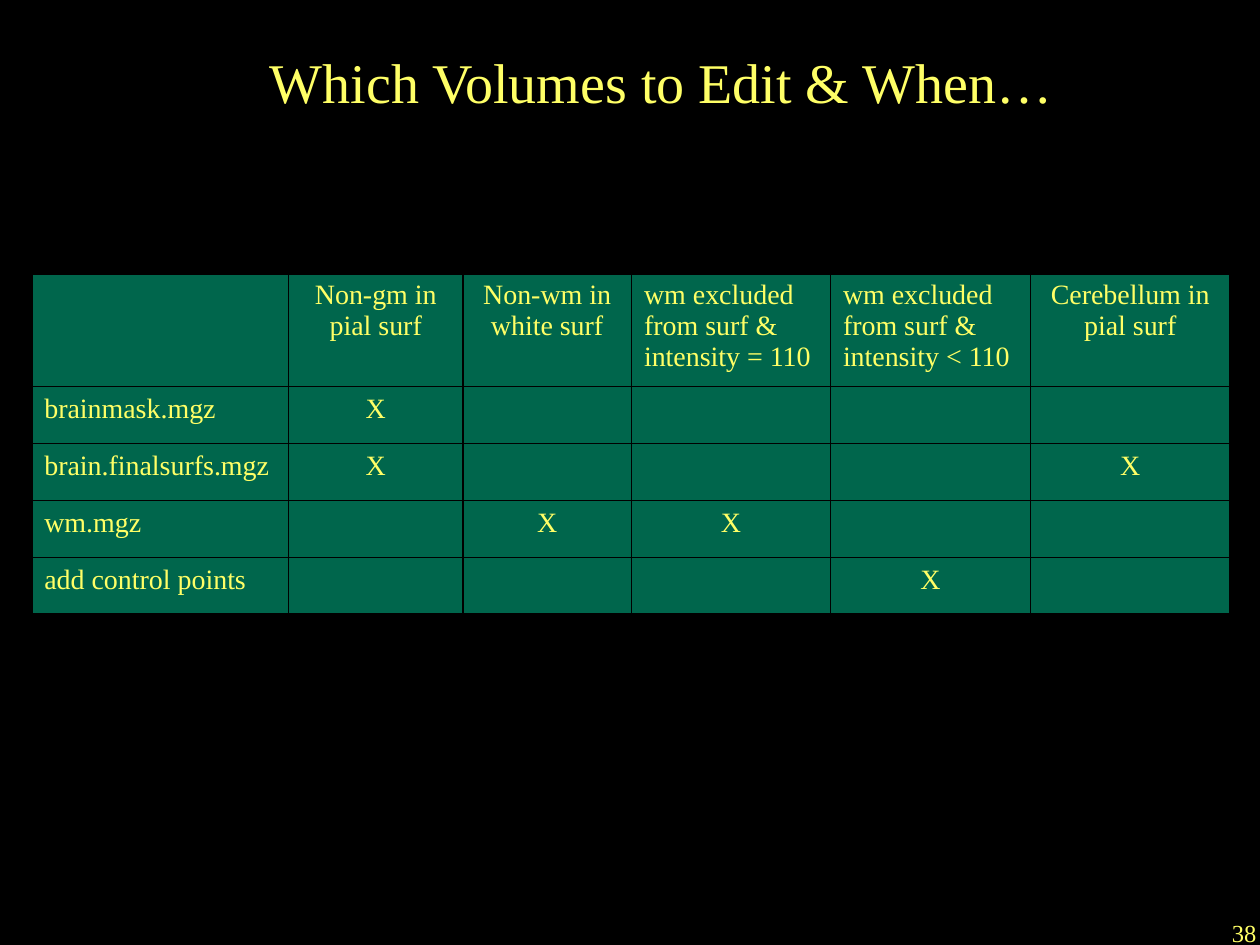
from dataclasses import dataclass

import pptx
import pptx.dml.color
import pptx.enum.text
import pptx.oxml
import pptx.oxml.ns
import pptx.util
from pptx.util import Cm

ALIGN = pptx.enum.text.PP_ALIGN
ANCHOR = pptx.enum.text.MSO_ANCHOR
FONT = "Times New Roman"
BLACK, YELLOW, GREEN = "000000", "FFFF66", "00CC99"
THIN, THICK = 1, 2.25


@dataclass(frozen=True)
class Problem:
    heading: str
    width: float
    align: ALIGN = ALIGN.CENTER


@dataclass(frozen=True)
class Volume:
    label: str
    marked: tuple[int, ...]


PROBLEMS = [
    Problem("", 5.18),
    Problem("Non-gm in pial surf", 3.51),
    Problem("Non-wm in white surf", 3.4),
    Problem("wm excluded from surf & intensity = 110", 4.01, ALIGN.LEFT),
    Problem("wm excluded from surf & intensity < 110", 4.03, ALIGN.LEFT),
    Problem("Cerebellum in pial surf", 4.03),
]
VOLUMES = [
    Volume("brainmask.mgz", (1,)),
    Volume("brain.finalsurfs.mgz", (1, 5)),
    Volume("wm.mgz", (2, 3)),
    Volume("add control points", (4,)),
]


def color(value: str) -> pptx.dml.color.RGBColor:
    return pptx.dml.color.RGBColor.from_string(value)


def write(frame, text: str, size: float, align: ALIGN) -> None:
    frame.word_wrap = True
    paragraph = frame.paragraphs[0]
    paragraph.text = text
    paragraph.alignment = align
    paragraph.font.name = FONT
    paragraph.font.size = pptx.util.Pt(size)
    paragraph.font.color.rgb = color(YELLOW)


def add_border(cell, side: str, width: float) -> None:
    cell._tc.get_or_add_tcPr().append(pptx.oxml.parse_xml(
        f'<a:{side} {pptx.oxml.ns.nsdecls("a")} w="{pptx.util.Pt(width)}">'
        f'<a:solidFill><a:srgbClr val="{BLACK}"/></a:solidFill></a:{side}>'
    ))


def style_cell(cell, row: int, column: int) -> None:
    outer_edges = {
        "lnL": column == 0,
        "lnR": column == len(PROBLEMS) - 1,
        "lnT": row == 0,
        "lnB": row == len(VOLUMES),
    }
    for side, is_outer in outer_edges.items():
        add_border(cell, side, THICK if is_outer else THIN)
    cell.fill.solid()
    cell.fill.fore_color.rgb = color(GREEN)
    tint = cell._tc.tcPr.find(".//" + pptx.oxml.ns.qn("a:solidFill") + "[last()]")
    tint = cell._tc.tcPr.find(pptx.oxml.ns.qn("a:solidFill"))[0]
    tint.append(pptx.oxml.parse_xml(
        f'<a:alpha {pptx.oxml.ns.nsdecls("a")} val="50000"/>'
    ))


def add_volume_table(slide) -> None:
    table = slide.shapes.add_table(
        len(VOLUMES) + 1, len(PROBLEMS), Cm(0.64), Cm(5.51), Cm(24.16), Cm(6.9)
    ).table
    table.first_row = False
    table.horz_banding = False
    for column, problem in enumerate(PROBLEMS):
        table.columns[column].width = Cm(problem.width)
    for row in range(len(VOLUMES) + 1):
        table.rows[row].height = Cm(1.15 if row else 2.28)
        for column, problem in enumerate(PROBLEMS):
            if row == 0:
                text, align = problem.heading, problem.align
            elif column == 0:
                text, align = VOLUMES[row - 1].label, ALIGN.LEFT
            else:
                text = "X" if column in VOLUMES[row - 1].marked else ""
                align = ALIGN.CENTER
            cell = table.cell(row, column)
            write(cell.text_frame, text, 16, align)
            style_cell(cell, row, column)


def main() -> None:
    deck = pptx.Presentation()
    deck.slide_width, deck.slide_height = Cm(25.4), Cm(19.05)
    slide = deck.slides.add_slide(deck.slide_layouts[5])
    slide.background.fill.solid()
    slide.background.fill.fore_color.rgb = color(BLACK)

    page_number = slide.shapes.add_textbox(Cm(20.3), Cm(18.39), Cm(5.28), Cm(1.27))
    write(page_number.text_frame, "38", 14, ALIGN.RIGHT)

    add_volume_table(slide)

    title = slide.shapes.title
    title.left, title.top, title.width, title.height = (
        Cm(2.21), Cm(0.05), Cm(22.25), Cm(3.18)
    )
    title.text_frame.vertical_anchor = ANCHOR.MIDDLE
    write(title.text_frame, "Which Volumes to Edit & When…", 32, ALIGN.CENTER)

    deck.save("out.pptx")


if __name__ == "__main__":
    main()
